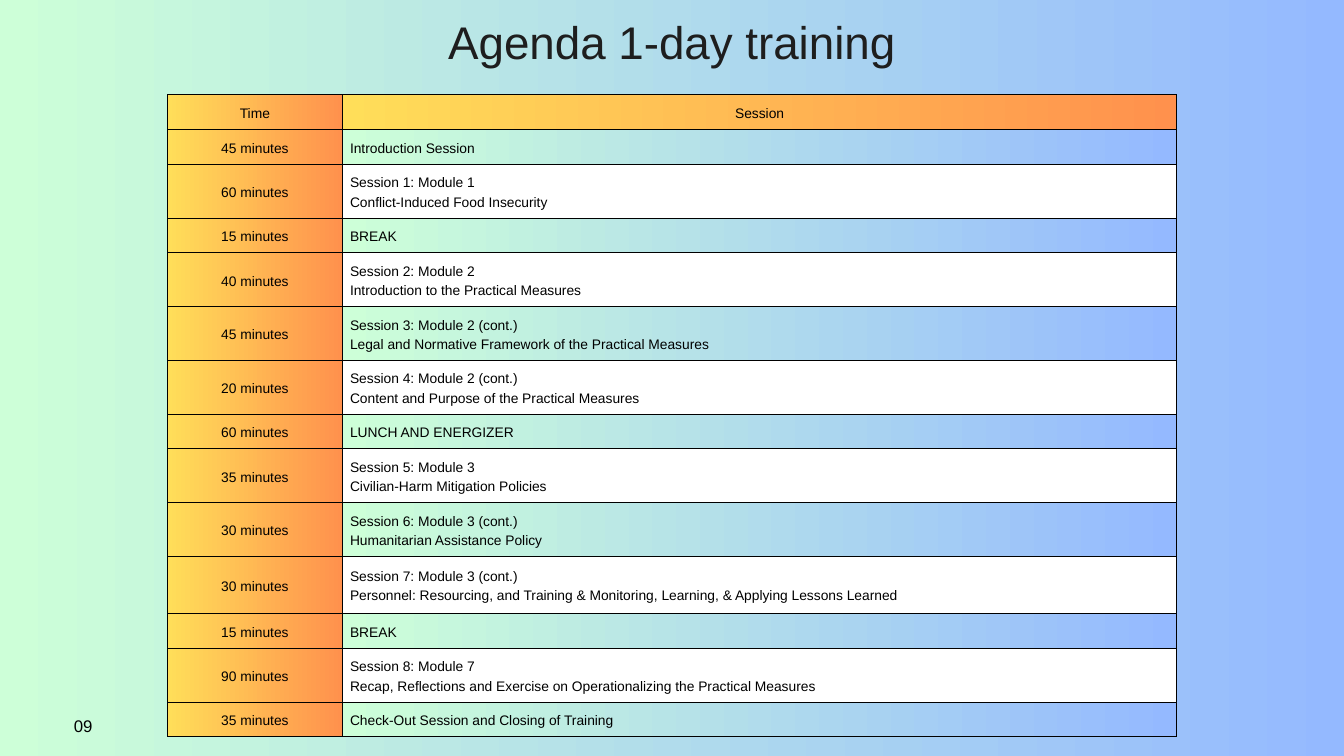
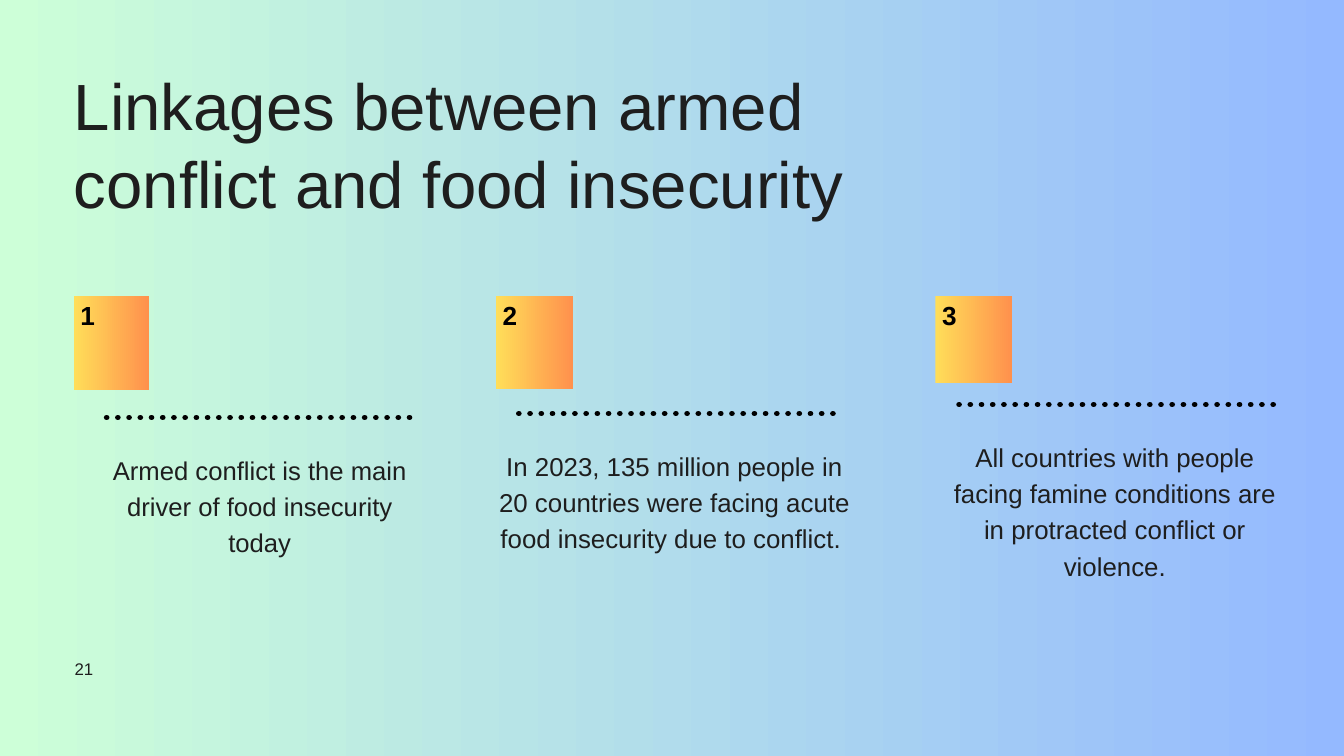
import dataclasses

import lxml.etree
import pptx
import pptx.dml.color
import pptx.enum.dml
import pptx.enum.shapes
import pptx.enum.text
import pptx.oxml.ns
import pptx.util

Cm = pptx.util.Cm
Pt = pptx.util.Pt
ALIGN = pptx.enum.text.PP_ALIGN
ANCHOR = pptx.enum.text.MSO_ANCHOR
qn = pptx.oxml.ns.qn

FONT = "Arial"
COLOURS = {
    "mint": "CDFFD8",
    "sky": "94B9FF",
    "yellow": "FFDE59",
    "orange": "FF914D",
    "ink": "1E1E1E",
    "black": "000000",
    "white": "FFFFFF",
}
COOL = ("mint", "sky")
WARM = ("yellow", "orange")

AGENDA = [
    ("Time", ["Session"]),
    ("45 minutes", ["Introduction Session"]),
    ("60 minutes", ["Session 1: Module 1", "Conflict-Induced Food Insecurity"]),
    ("15 minutes", ["BREAK"]),
    ("40 minutes", ["Session 2: Module 2", "Introduction to the Practical Measures"]),
    ("45 minutes", ["Session 3: Module 2 (cont.)",
                    "Legal and Normative Framework of the Practical Measures"]),
    ("20 minutes", ["Session 4: Module 2 (cont.)",
                    "Content and Purpose of the Practical Measures"]),
    ("60 minutes", ["LUNCH AND ENERGIZER"]),
    ("35 minutes", ["Session 5: Module 3", "Civilian-Harm Mitigation Policies"]),
    ("30 minutes", ["Session 6: Module 3 (cont.)", "Humanitarian Assistance Policy"]),
    ("30 minutes", ["Session 7: Module 3 (cont.)",
                    "Personnel: Resourcing, and Training & Monitoring, Learning, "
                    "& Applying Lessons Learned"]),
    ("15 minutes", ["BREAK"]),
    ("90 minutes", ["Session 8: Module 7",
                    "Recap, Reflections and Exercise on Operationalizing "
                    "the Practical Measures"]),
    ("35 minutes", ["Check-Out Session and Closing of Training"]),
]
ROW_HEIGHTS = {1: 1.32, 2: 2.03}
TALL_ROW = (10, 2.16)


@dataclasses.dataclass
class Card:
    text: str
    left: float
    badge: tuple
    rule: tuple
    body: tuple
    size: float


CARDS = [
    Card("Armed conflict is the main driver of food insecurity today",
         2.79, (2.84, 3.58), (1.24, 4.6, 11.81), (0.99, 12.07, 5.11), 27.5),
    Card("In 2023, 135 million people in 20 countries were facing acute "
         "food insecurity due to conflict. ",
         18.75, (2.9, 3.51), (0.86, 4.45, 12.01), (0, 13.49, 7.04), 27.7),
    Card("All countries with people facing famine conditions are in "
         "protracted conflict or violence.",
         35.36, (2.9, 3.3), (0.89, 4.11, 11.99), (0.66, 12.24, 7.8), 27.7),
]
CARDS_TOP = 11.18
RULE_TO_BODY = 1.21


def rgb(name):
    return pptx.dml.color.RGBColor.from_string(COLOURS[name])


def fill_solid(fill, name):
    fill.solid()
    fill.fore_color.rgb = rgb(name)


def fill_gradient(fill, names):
    fill.gradient()
    fill.gradient_angle = 0
    for stop, name in zip(fill.gradient_stops, names):
        stop.color.rgb = rgb(name)


def write(tf, lines, size, colour="ink", spacing=None, align=ALIGN.LEFT, bold=False):
    for i, line in enumerate(lines):
        p = tf.add_paragraph() if i else tf.paragraphs[0]
        p.text = line
        p.alignment = align
        if spacing:
            p.line_spacing = Pt(spacing)
        p.font.name = FONT
        p.font.size = Pt(size)
        p.font.bold = bold
        p.font.color.rgb = rgb(colour)


def fit_frame(tf, inset=0):
    tf.word_wrap = True
    tf.auto_size = pptx.enum.text.MSO_AUTO_SIZE.SHAPE_TO_FIT_TEXT
    tf.vertical_anchor = ANCHOR.TOP
    tf.margin_left = tf.margin_right = Cm(inset)
    tf.margin_top = tf.margin_bottom = Cm(inset / 2)


def add_text(shapes, box, text, size, inset=0, **style):
    sp = shapes.add_textbox(*map(Cm, box))
    fit_frame(sp.text_frame, inset)
    write(sp.text_frame, [text], size, **style)


def add_slide(prs, title, box, size, align=ALIGN.LEFT):
    s = prs.slides.add_slide(prs.slide_layouts.get_by_name("Title Only"))
    fill_gradient(s.background.fill, COOL)
    sp = s.shapes.title
    sp.left, sp.top, sp.width, sp.height = map(Cm, box)
    fit_frame(sp.text_frame)
    write(sp.text_frame, [title], size, spacing=size * 1.2, align=align)
    return s


def set_borders(cell, colour, width):
    tc_pr = cell._tc.get_or_add_tcPr()
    for i, side in enumerate(("lnL", "lnR", "lnT", "lnB")):
        ln = lxml.etree.Element(qn(f"a:{side}"), w=str(int(Pt(width))))
        fill = lxml.etree.SubElement(ln, qn("a:solidFill"))
        lxml.etree.SubElement(fill, qn("a:srgbClr"), val=COLOURS[colour])
        tc_pr.insert(i, ln)


def format_cell(cell, lines, fill, align):
    cell.margin_left = cell.margin_right = Cm(0.28)
    cell.margin_top = cell.margin_bottom = Cm(0.28)
    cell.vertical_anchor = ANCHOR.MIDDLE
    write(cell.text_frame, lines, 14.8, "black", 20.5, align)
    if fill:
        fill_gradient(cell.fill, fill)
    else:
        fill_solid(cell.fill, "white")
    set_borders(cell, "black", 0.34)


def add_agenda(s, left, top, widths):
    heights = [ROW_HEIGHTS[len(lines)] for _, lines in AGENDA]
    heights[TALL_ROW[0]] = TALL_ROW[1]
    table = s.shapes.add_table(len(AGENDA), len(widths), Cm(left), Cm(top),
                               Cm(sum(widths)), Cm(sum(heights))).table
    table.first_row = table.horz_banding = False
    for column, width in zip(table.columns, widths):
        column.width = Cm(width)
    for i, (time, session) in enumerate(AGENDA):
        table.rows[i].height = Cm(heights[i])
        session_fill = WARM if i == 0 else COOL if i % 2 else None
        format_cell(table.cell(i, 0), [time], WARM, ALIGN.CENTER)
        format_cell(table.cell(i, 1), session, session_fill,
                    ALIGN.LEFT if i else ALIGN.CENTER)


def add_dotted_rule(shapes, left, top, length):
    c = shapes.add_connector(pptx.enum.shapes.MSO_CONNECTOR.STRAIGHT,
                             Cm(left), Cm(top), Cm(left + length), Cm(top))
    c.line.width = Pt(6)
    c.line.color.rgb = rgb("black")
    c.line.dash_style = pptx.enum.dml.MSO_LINE.ROUND_DOT
    sp_pr = c._element.spPr
    sp_pr.get_or_add_ln().set("cap", "rnd")
    lxml.etree.SubElement(sp_pr, qn("a:effectLst"))


def add_card(s, number, card, top):
    shapes = s.shapes.add_group_shape().shapes
    rule_dx, rule_dy, length = card.rule
    body_dx, width, height = card.body
    add_dotted_rule(shapes, card.left + rule_dx, top + rule_dy, length)
    add_text(shapes, (card.left + body_dx, top + rule_dy + RULE_TO_BODY, width, height),
             card.text, card.size, spacing=38.8, align=ALIGN.CENTER)
    badge = shapes.add_shape(pptx.enum.shapes.MSO_SHAPE.RECTANGLE,
                             Cm(card.left), Cm(top), *map(Cm, card.badge))
    badge.shadow.inherit = False
    badge.line.fill.background()
    fill_gradient(badge.fill, WARM)
    badge.text_frame.vertical_anchor = ANCHOR.TOP
    write(badge.text_frame, [str(number)], 28, "black", bold=True)


def agenda_slide(prs):
    s = add_slide(prs, "Agenda 1-day training", (11.79, 0.53, 27.2, 1.98), 49,
                  ALIGN.CENTER)
    add_agenda(s, 6.32, 3.56, (6.63, 31.52))
    add_text(s.shapes, (2.54, 26.92, 7.62, 1.02), "09", 18, inset=0.25, colour="black")


def linkages_slide(prs):
    s = add_slide(prs, "Linkages between armed conflict and food insecurity",
                  (2.79, 2.46, 32.56, 6.27), 70)
    for number, card in enumerate(CARDS, 1):
        add_card(s, number, card, CARDS_TOP)
    add_text(s.shapes, (2.82, 24.77, 1.9, 0.81), "21", 18, spacing=25.2)


def main():
    prs = pptx.Presentation()
    prs.slide_width = Cm(50.8)
    prs.slide_height = prs.slide_width * 9 // 16
    agenda_slide(prs)
    linkages_slide(prs)
    prs.save("out.pptx")


if __name__ == "__main__":
    main()
